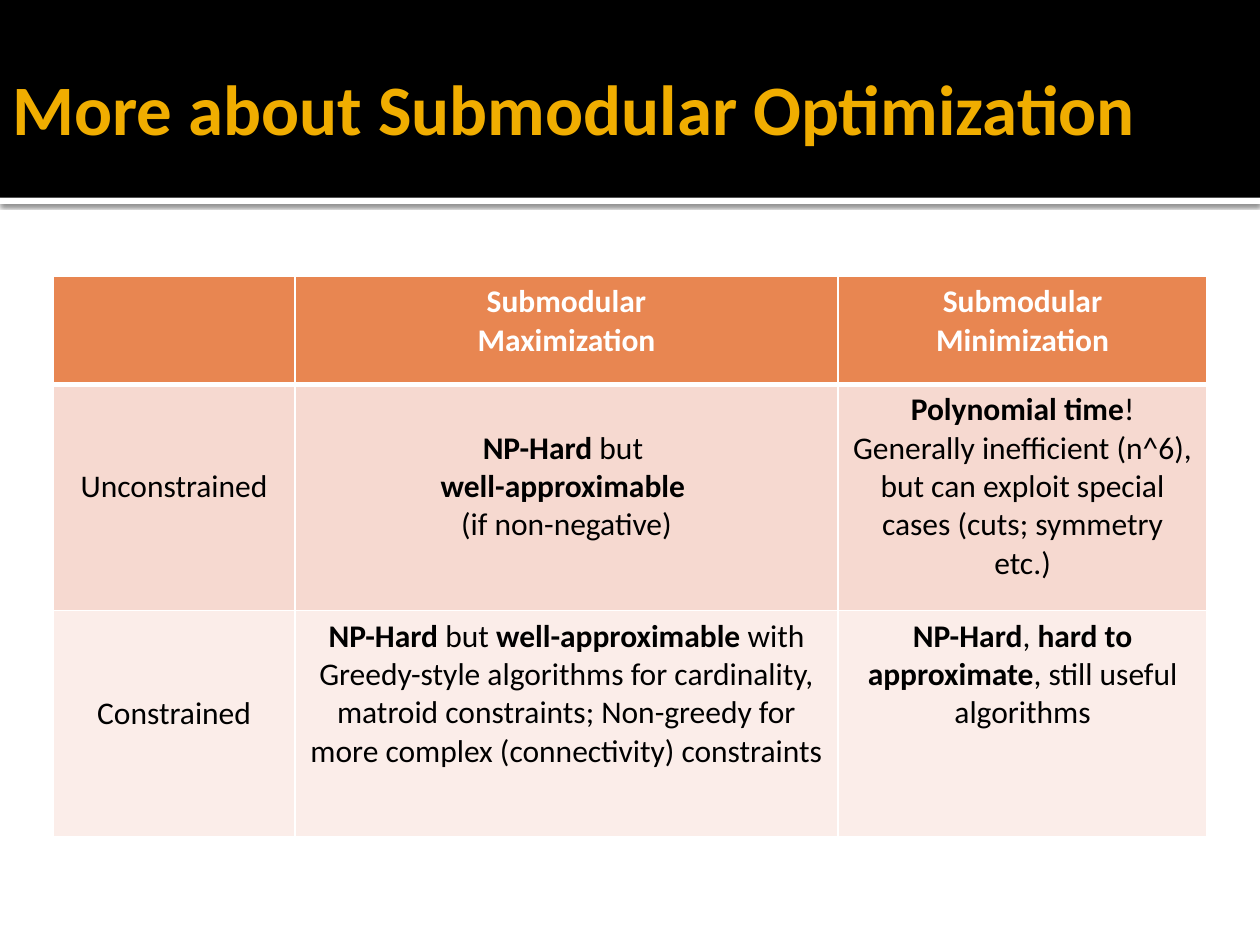
from lxml.etree import SubElement
from pptx import Presentation
from pptx.dml.color import RGBColor
from pptx.enum.shapes import MSO_SHAPE as Shape
from pptx.enum.text import MSO_ANCHOR as Anchor, PP_ALIGN as Align
from pptx.oxml import parse_xml
from pptx.oxml.ns import nsdecls, qn
from pptx.util import Pt

BLACK = RGBColor(0x00, 0x00, 0x00)
WHITE = RGBColor(0xFF, 0xFF, 0xFF)
GOLD = RGBColor(0xF0, 0xAD, 0x00)
ORANGE = RGBColor(0xE8, 0x86, 0x51)
PEACH = RGBColor(0xF6, 0xD9, 0xD0)
BLUSH = RGBColor(0xFB, 0xED, 0xE9)

LINE = 22  # height of one line of table text
COLUMNS = (138.2, 310.3, 211)
ROWS = (61.6, 129.4, 129.4)
ROW_FILLS = (ORANGE, PEACH, BLUSH)

# Each cell: its paragraphs, and the lines it is moved down by.
CELLS = (
    (([], 0),
     (["**Submodular**", "**Maximization**"], 0),
     (["**Submodular**", "**Minimization**"], 0)),
    ((["Unconstrained"], 2),
     (["**NP-Hard **but ", "**well-approximable **", "(if non-negative)"], 1),
     (["**Polynomial time**!",
       "Generally inefficient (n^6), but can exploit special cases "
       "(cuts; symmetry etc.)"], 0)),
    ((["Constrained"], 2),
     (["**NP-Hard **but **well-approximable **with Greedy-style algorithms "
       "for cardinality, matroid constraints; Non-greedy for more complex "
       "(connectivity) constraints"], 0),
     (["**NP-Hard**, **hard to approximate**, still useful algorithms"], 0)),
)


def write(frame, paragraphs, size=18, color=BLACK, align=Align.CENTER):
    """Fill a text frame; parts between ** marks are bold."""
    for index, text in enumerate(paragraphs):
        para = frame.add_paragraph() if index else frame.paragraphs[0]
        para.alignment = align
        for number, part in enumerate(text.split("**")):
            if part:
                span = para.add_run()
                span.text = part
                span.font.name = "Calibri"
                span.font.size = Pt(size)
                span.font.bold = number % 2 == 1
                span.font.color.rgb = color


def set_borders(cell, **widths):
    """Draw white borders, with widths in points by side: L, R, T, B."""
    properties = cell._tc.get_or_add_tcPr()
    for index, (side, width) in enumerate(widths.items()):
        line = parse_xml(
            f'<a:ln{side} {nsdecls("a")} w="{Pt(width)}"><a:solidFill>'
            f'<a:srgbClr val="{WHITE}"/></a:solidFill></a:ln{side}>')
        properties.insert(index, line)


class SlideBuilder:
    def __init__(self, page):
        self.page = page

    def band(self, top, height, fill):
        """Add a full-width bar."""
        bar = self.page.shapes.add_shape(
            Shape.RECTANGLE, Pt(0), Pt(top), Pt(720), Pt(height))
        bar.shadow.inherit = False
        bar.fill.solid()
        bar.fill.fore_color.rgb = fill
        bar.line.fill.background()
        return bar

    def drop_shadow(self, bar):
        effects = bar._element.spPr.find(qn("a:effectLst"))
        shadow = SubElement(effects, qn("a:outerShdw"), blurRad=str(Pt(2.5)),
                            dist=str(Pt(0.8)), dir="5400000", algn="tl",
                            rotWithShape="0")
        color = SubElement(shadow, qn("a:srgbClr"), val=str(BLACK))
        SubElement(color, qn("a:alpha"), val="60000")

    def title(self, text):
        box = self.page.shapes.add_textbox(Pt(0), Pt(12.2), Pt(720), Pt(98.6))
        frame = box.text_frame
        frame.word_wrap = True
        frame.vertical_anchor = Anchor.MIDDLE
        frame.margin_left = Pt(7.2)
        frame.margin_right = Pt(3.6)
        write(frame, [f"**{text}**"], size=40.5, color=GOLD, align=Align.LEFT)

    def table(self, left, top):
        table = self.page.shapes.add_table(
            len(ROWS), len(COLUMNS), Pt(left), Pt(top),
            Pt(sum(COLUMNS)), Pt(sum(ROWS))).table
        for column, width in zip(table.columns, COLUMNS):
            column.width = Pt(width)
        for row, height in zip(table.rows, ROWS):
            row.height = Pt(height)
        for r, cells in enumerate(CELLS):
            for c, (paragraphs, offset) in enumerate(cells):
                cell = table.cell(r, c)
                cell.fill.solid()
                cell.fill.fore_color.rgb = ROW_FILLS[r]
                cell.margin_top = Pt(3.6 + offset * LINE)
                set_borders(cell, L=1, R=1, T=3 if r == 1 else 1,
                            B=3 if r == 0 else 1)
                write(cell.text_frame, paragraphs,
                      color=BLACK if r else WHITE)


def main():
    deck = Presentation()
    deck.slide_width, deck.slide_height = Pt(720), Pt(540)
    builder = SlideBuilder(deck.slides.add_slide(deck.slide_layouts[6]))
    builder.drop_shadow(builder.band(113, 3.6, WHITE))
    builder.band(0, 113, BLACK)
    builder.title("More about Submodular Optimization")
    builder.table(30.4, 158)
    deck.save("out.pptx")


if __name__ == "__main__":
    main()
